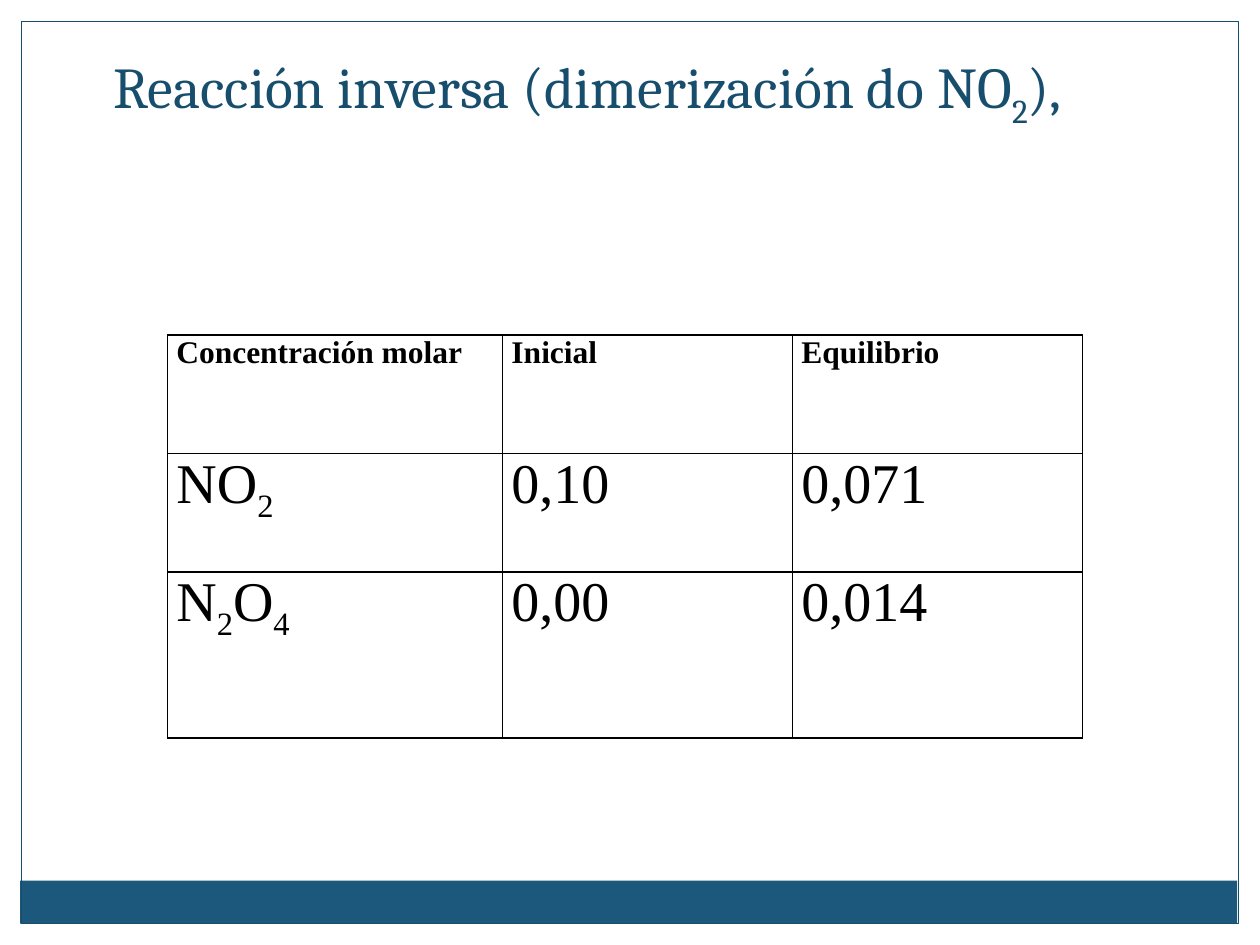
import dataclasses

import lxml.etree
import pptx
import pptx.dml.color
import pptx.enum.shapes
import pptx.enum.text
import pptx.oxml.ns
import pptx.util

Inches = pptx.util.Inches
Pt = pptx.util.Pt


@dataclasses.dataclass(frozen=True)
class Theme:
    white: str = "FFFFFF"
    black: str = "000000"
    band: str = "1B587C"
    accent: str = "184E6D"
    title_font: str = "Cambria"
    table_font: str = "Times New Roman"
    title_size: float = 33
    header_size: float = 18
    value_size: float = 32
    frame_width: float = 0.75
    border_width: float = 1


@dataclasses.dataclass(frozen=True)
class Panel:
    left: float
    top: float
    width: float
    height: float
    fill: str | None = None
    line: str | None = None


THEME = Theme()
PANELS = (
    Panel(0, 0, 10, 0.17, fill=THEME.white),
    Panel(9.83, 0, 0.17, 7.5, fill=THEME.white),
    Panel(0, 0, 0.17, 7.5, fill=THEME.white),
    Panel(0.16, 6.99, 9.66, 0.34, fill=THEME.band),
    Panel(0.17, 0.17, 9.66, 7.16, line=THEME.accent),
)
TITLE = ("Reacción inversa (dimerización do NO", "2", "),")
COLUMN_WIDTHS = (2.66, 2.3, 2.3)
ROW_HEIGHTS = (0.94, 0.94, 1.32)
CONCENTRATIONS = (
    (("Concentración molar",), ("Inicial",), ("Equilibrio",)),
    (("NO", "2"), ("0,10",), ("0,071",)),
    (("N", "2", "O", "4"), ("0,00",), ("0,014",)),
)


def rgb(value: str) -> pptx.dml.color.RGBColor:
    return pptx.dml.color.RGBColor.from_string(value)


def write_text(text_frame, pieces: tuple[str, ...], *, font: str, size: float,
               color: str, bold: bool = False, alignment=None) -> None:
    """Write pieces that alternate between normal text and subscript."""
    paragraph = text_frame.paragraphs[0]
    paragraph.alignment = alignment
    for index, piece in enumerate(pieces):
        run = paragraph.add_run()
        run.text = piece
        run.font.name = font
        run.font.size = Pt(size)
        run.font.bold = bold
        run.font.color.rgb = rgb(color)
        if index % 2:
            run.font._element.set("baseline", "-25000")


def draw_panel(slide, panel: Panel) -> None:
    shape = slide.shapes.add_shape(
        pptx.enum.shapes.MSO_SHAPE.RECTANGLE, Inches(panel.left), Inches(panel.top),
        Inches(panel.width), Inches(panel.height))
    shape.shadow.inherit = False
    if panel.fill:
        shape.fill.solid()
        shape.fill.fore_color.rgb = rgb(panel.fill)
    else:
        shape.fill.background()
    if panel.line:
        shape.line.color.rgb = rgb(panel.line)
        shape.line.width = Pt(THEME.frame_width)
    else:
        shape.line.fill.background()


def draw_title(slide) -> None:
    text_box = slide.shapes.add_textbox(Inches(0), Inches(0.25), Inches(9.33), Inches(0.83))
    text_box.text_frame.word_wrap = True
    text_box.text_frame.vertical_anchor = pptx.enum.text.MSO_ANCHOR.BOTTOM
    write_text(text_box.text_frame, TITLE, font=THEME.title_font, size=THEME.title_size,
               color=THEME.accent, alignment=pptx.enum.text.PP_ALIGN.CENTER)


def add_borders(cell) -> None:
    qualified = pptx.oxml.ns.qn
    properties = cell._tc.get_or_add_tcPr()
    for side in ("L", "R", "T", "B"):
        line = lxml.etree.SubElement(
            properties, qualified(f"a:ln{side}"), w=str(Pt(THEME.border_width)))
        fill = lxml.etree.SubElement(line, qualified("a:solidFill"))
        lxml.etree.SubElement(fill, qualified("a:srgbClr"), val=THEME.black)


def draw_table(slide) -> None:
    table = slide.shapes.add_table(
        len(ROW_HEIGHTS), len(COLUMN_WIDTHS), Inches(1.33), Inches(2.66),
        Inches(sum(COLUMN_WIDTHS)), Inches(sum(ROW_HEIGHTS))).table
    table.first_row = False
    table.horz_banding = False
    for column, width in zip(table.columns, COLUMN_WIDTHS):
        column.width = Inches(width)
    for row_index, (row, height) in enumerate(zip(table.rows, ROW_HEIGHTS)):
        row.height = Inches(height)
        is_header = row_index == 0
        for cell, pieces in zip(row.cells, CONCENTRATIONS[row_index]):
            cell.margin_left = cell.margin_right = Inches(0.07)
            cell.margin_top = cell.margin_bottom = Inches(0)
            add_borders(cell)
            cell.fill.background()
            write_text(cell.text_frame, pieces, font=THEME.table_font,
                       size=THEME.header_size if is_header else THEME.value_size,
                       color=THEME.black, bold=is_header)


def main() -> None:
    presentation = pptx.Presentation()
    presentation.slide_width = Inches(10)
    presentation.slide_height = Inches(7.5)
    slide = presentation.slides.add_slide(presentation.slide_layouts[6])
    slide.background.fill.solid()
    slide.background.fill.fore_color.rgb = rgb(THEME.white)
    for panel in PANELS:
        draw_panel(slide, panel)
    draw_title(slide)
    draw_table(slide)
    presentation.save("out.pptx")


if __name__ == "__main__":
    main()
